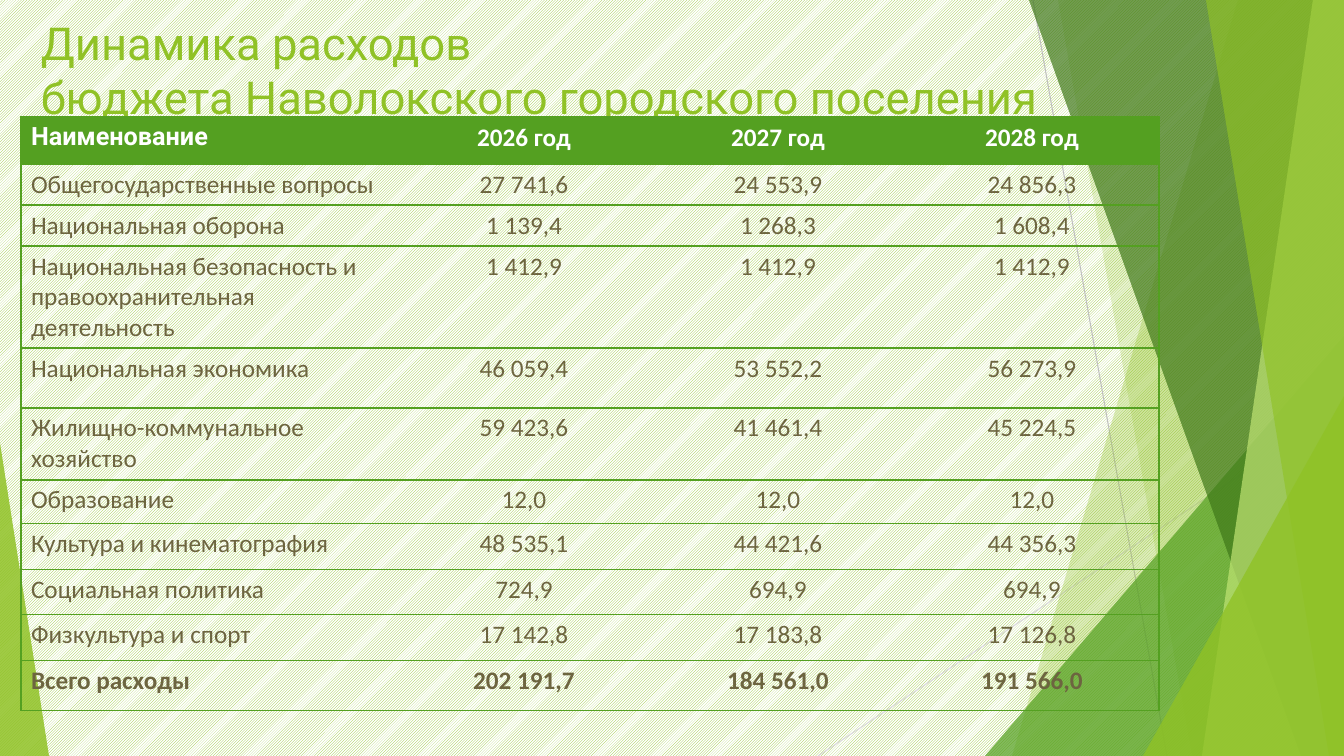
import pptx
import pptx.util
import pptx.dml.color
import pptx.enum.dml
import pptx.enum.shapes
import pptx.enum.text
import pptx.oxml.ns
import pptx.oxml.xmlchemy

EMU_PER_PX = 914400 / 100.8
PAGE_WIDTH, PAGE_HEIGHT = 1344, 756
COLORS = {
    "lime": "90C226", "green": "54A021", "forest": "3F7819", "pale": "C0E474",
    "white": "FFFFFF", "text": "6D6540", "gray": "BFBFBF", "light_gray": "D9D9D9",
}
TITLE_LINES = ["Динамика расходов", "бюджета Наволокского городского поселения"]
COLUMN_WIDTHS = [376, 254, 254, 254]
BUDGET_ROWS = [
    (47, "Наименование", "2026 год", "2027 год", "2028 год"),
    (41, "Общегосударственные вопросы", "27 741,6", "24 553,9", "24 856,3"),
    (41, "Национальная оборона", "1 139,4", "1 268,3", "1 608,4"),
    (102, "Национальная безопасность и правоохранительная деятельность",
     "1 412,9", "1 412,9", "1 412,9"),
    (60, "Национальная экономика", "46 059,4", "53 552,2", "56 273,9"),
    (72, "Жилищно-коммунальное хозяйство", "59 423,6", "41 461,4", "45 224,5"),
    (44, "Образование", "12,0", "12,0", "12,0"),
    (46, "Культура и кинематография", "48 535,1", "44 421,6", "44 356,3"),
    (45, "Социальная политика", "724,9", "694,9", "694,9"),
    (46, "Физкультура и спорт", "17 142,8", "17 183,8", "17 126,8"),
    (50, "Всего расходы", "202 191,7", "184 561,0", "191 566,0"),
]


def px(length):
    return pptx.util.Emu(round(length * EMU_PER_PX))


def rgb(name):
    return pptx.dml.color.RGBColor.from_string(COLORS[name])


def add_element(parent, tag, **attributes):
    element = pptx.oxml.xmlchemy.OxmlElement(tag)
    for key, value in attributes.items():
        element.set(key, str(value))
    parent.append(element)
    return element


def add_run(para, text, font_name, size, color, bold=False):
    run = para.add_run()
    run.text = text
    run.font.name = font_name
    run.font.size = pptx.util.Pt(size)
    run.font.bold = bold
    run.font.color.rgb = rgb(color)


def paint(shape, color, opacity):
    shape.shadow.inherit = False
    shape.fill.solid()
    shape.fill.fore_color.rgb = rgb(color)
    shape.line.fill.background()
    fill_color = shape._element.spPr.find(".//" + pptx.oxml.ns.qn("a:srgbClr"))
    add_element(fill_color, "a:alpha", val=opacity * 1000)


def add_line(page, start, end, color):
    line = page.shapes.add_connector(
        pptx.enum.shapes.MSO_CONNECTOR.STRAIGHT, *map(px, start + end))
    line.line.color.rgb = rgb(color)
    line.line.width = pptx.util.Pt(0.75)
    add_element(line._element.spPr, "a:effectLst")


def add_band(page, box, top_x, bottom_x, color, opacity):
    left, top, width, height = box
    right, bottom = left + width, top + height
    builder = page.shapes.build_freeform(px(left + top_x), px(top), scale=1.0)
    corners = [(right, top), (right, bottom), (left + bottom_x, bottom)]
    builder.add_line_segments([(px(x), px(y)) for x, y in corners], close=True)
    paint(builder.convert_to_shape(), color, opacity)


def add_corner(page, box, apex, color, opacity):
    corner = page.shapes.add_shape(
        pptx.enum.shapes.MSO_SHAPE.ISOSCELES_TRIANGLE, *map(px, box))
    corner.adjustments[0] = apex
    paint(corner, color, opacity)


def add_decor(page, box):
    left, top, width, height = box
    right, bottom = left + width, top + height
    add_line(page, (left + 1033, top), (left + 1167, bottom), "gray")
    add_line(page, (right, top + 406), (left + 818, bottom), "light_gray")
    add_band(page, box, 1238, 1012, "lime", 30)
    add_band(page, box, 1058, 1192, "lime", 20)
    add_corner(page, (right - 359, bottom - 420, 359, 420), 1, "green", 72)
    add_band(page, box, 1029, 1301, "forest", 70)
    add_band(page, box, 1313, 1202, "pale", 70)
    add_band(page, box, 1206, 1329, "lime", 65)
    add_corner(page, (right - 201, bottom - 360, 201, 360), 1, "lime", 80)
    add_corner(page, (left, bottom - 313, 49, 313), 0, "lime", 85)


def add_title(page, box):
    frame = page.shapes.add_textbox(*map(px, box)).text_frame
    frame.word_wrap = True
    frame.vertical_anchor = pptx.enum.text.MSO_ANCHOR.MIDDLE
    para = frame.paragraphs[0]
    for index, text in enumerate(TITLE_LINES):
        if index:
            para.add_line_break()
        add_run(para, text, "Roboto", 32.4, "lime")


def set_borders(cell, visible_sides):
    properties = cell._tc.get_or_add_tcPr()
    for side in "LRTB":
        border = add_element(properties, "a:ln" + side, w=12700)
        if side in visible_sides:
            fill = add_element(border, "a:solidFill")
            add_element(fill, "a:srgbClr", val=COLORS["green"])
        else:
            add_element(border, "a:noFill")


def add_budget_table(page, box):
    table = page.shapes.add_table(
        len(BUDGET_ROWS), len(COLUMN_WIDTHS), *map(px, box)).table
    table.horz_banding = False
    for column, width in zip(table.columns, COLUMN_WIDTHS):
        column.width = px(width)
    last_row, last_column = len(BUDGET_ROWS) - 1, len(COLUMN_WIDTHS) - 1
    for row_index, (height, *texts) in enumerate(BUDGET_ROWS):
        table.rows[row_index].height = px(height)
        header = row_index == 0
        for column_index, text in enumerate(texts):
            cell = table.cell(row_index, column_index)
            sides = "TB" + {0: "L", last_column: "R"}.get(column_index, "")
            set_borders(cell, sides)
            if header:
                cell.fill.solid()
                cell.fill.fore_color.rgb = rgb("green")
            else:
                cell.fill.background()
            para = cell.text_frame.paragraphs[0]
            if column_index:
                para.alignment = pptx.enum.text.PP_ALIGN.CENTER
            font_name = "Roboto" if header and column_index == 0 else "Calibri"
            add_run(para, text, font_name, 18, "white" if header else "text",
                    row_index in (0, last_row))


def add_budget_page(deck):
    page = deck.slides.add_slide(deck.slide_layouts[6])
    fill = page.background.fill
    fill.patterned()
    fill.pattern = pptx.enum.dml.MSO_PATTERN.LIGHT_UPWARD_DIAGONAL
    fill.fore_color.rgb = rgb("lime")
    fill.back_color.rgb = rgb("white")
    add_decor(page, (0, 0, PAGE_WIDTH, PAGE_HEIGHT))
    add_title(page, (31, 5, 1195, 129))
    table_height = sum(row[0] for row in BUDGET_ROWS)
    add_budget_table(page, (21, 117, sum(COLUMN_WIDTHS), table_height))


def main():
    deck = pptx.Presentation()
    deck.slide_width, deck.slide_height = px(PAGE_WIDTH), px(PAGE_HEIGHT)
    add_budget_page(deck)
    deck.save("out.pptx")


if __name__ == "__main__":
    main()
